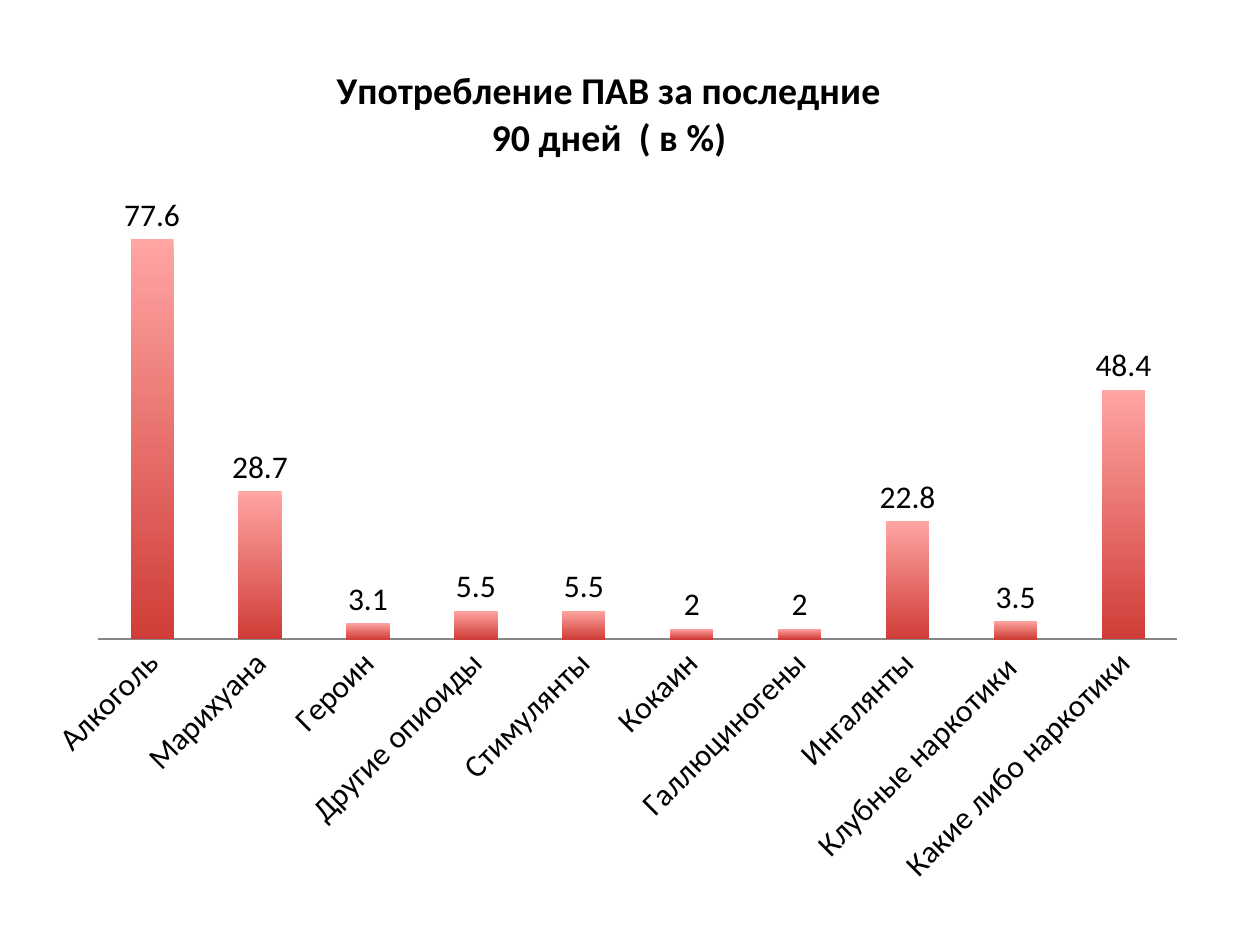
from pptx import Presentation
from pptx.chart.data import CategoryChartData
from pptx.dml.color import RGBColor
from pptx.enum.chart import XL_CHART_TYPE, XL_LABEL_POSITION, XL_TICK_MARK
from pptx.oxml import parse_xml
from pptx.oxml.ns import nsdecls, qn
from pptx.util import Cm, Pt

COLORS = {"text": "000000", "axis": "868686", "bar_top": "FFA5A2", "bar_bottom": "D03D38"}
USE = {
    "Алкоголь": 77.6,
    "Марихуана": 28.7,
    "Героин": 3.1,
    "Другие опиоиды": 5.5,
    "Стимулянты": 5.5,
    "Кокаин": 2,
    "Галлюциногены": 2,
    "Ингалянты": 22.8,
    "Клубные наркотики ": 3.5,
    "Какие либо наркотики": 48.4,
}
TITLE_LINES = ["Употребление ПАВ за последние", "90 дней  ( в %)"]


def rgb(name):
    return RGBColor.from_string(COLORS[name])


def format_font(font, size=18, bold=False, color="text"):
    font.name = "Calibri"
    font.size = Pt(size)
    font.bold = bold
    font.color.rgb = rgb(color)


def write_lines(text_frame, lines, **font_format):
    """Write one paragraph per line, all in the same format."""
    for index, line in enumerate(lines):
        paragraph = text_frame.add_paragraph() if index else text_frame.paragraphs[0]
        run = paragraph.add_run()
        run.text = line
        format_font(run.font, **font_format)


def manual_layout(inner=False, **fractions):
    """Return a c:layout placed by fractions (x, y, w, h) of the chart."""
    target = '<c:layoutTarget val="inner"/>' if inner else ""
    modes = '<c:xMode val="edge"/><c:yMode val="edge"/>'
    sizes = "".join(f'<c:{key} val="{value}"/>' for key, value in fractions.items())
    return parse_xml(
        f'<c:layout {nsdecls("c")}><c:manualLayout>{target}{modes}{sizes}'
        "</c:manualLayout></c:layout>"
    )


def place(element, layout, position):
    for old_layout in element.findall(qn("c:layout")):
        element.remove(old_layout)
    element.insert(position, layout)


class SlideBuilder:
    def __init__(self, slide):
        self.slide = slide

    def column_chart(self, values, left, top, width, height):
        data = CategoryChartData()
        data.categories = list(values)
        data.add_series("Series 1", list(values.values()))
        frame = self.slide.shapes.add_chart(
            XL_CHART_TYPE.COLUMN_CLUSTERED, Cm(left), Cm(top), Cm(width), Cm(height), data
        )
        chart = frame.chart
        chart.has_legend = False
        format_font(chart.font)
        self.format_columns(chart.plots[0])
        self.format_axes(chart)
        plot_area = chart._chartSpace.chart.plotArea
        place(plot_area, manual_layout(inner=True, x=0.06, y=0.17, w=0.92, h=0.53), 0)
        return chart

    def format_columns(self, plot):
        plot.gap_width = 150
        plot.overlap = -25
        plot.vary_by_categories = False
        fill = plot.series[0].format.fill
        fill.gradient()
        fill.gradient_angle = 270
        for stop, color, position in zip(fill.gradient_stops, ("bar_top", "bar_bottom"), (0, 1)):
            stop.color.rgb = rgb(color)
            stop.position = position
        plot.has_data_labels = True
        labels = plot.data_labels
        labels.show_value = True
        labels.position = XL_LABEL_POSITION.OUTSIDE_END
        format_font(labels.font)

    def format_axes(self, chart):
        value_axis = chart.value_axis
        value_axis.minimum_scale = 0
        value_axis.maximum_scale = 90
        value_axis.has_major_gridlines = False
        value_axis.visible = False
        category_axis = chart.category_axis
        category_axis.major_tick_mark = XL_TICK_MARK.NONE
        category_axis.format.line.color.rgb = rgb("axis")
        category_axis.format.line.width = Pt(0.75)
        format_font(category_axis.tick_labels.font)
        body = category_axis._element.find(qn("c:txPr")).find(qn("a:bodyPr"))
        body.set("rot", str(-45 * 60000))

    def chart_title(self, chart, lines, x, y):
        chart.has_title = True
        title = chart.chart_title
        write_lines(title.text_frame, lines, size=21.6, bold=True)
        place(title._element, manual_layout(x=x, y=y), 1)
        title._element.find(qn("c:overlay")).set("val", "1")


def main():
    presentation = Presentation()
    presentation.slide_width = Cm(25.4)
    presentation.slide_height = Cm(19.05)
    blank_layout = presentation.slide_layouts[6]
    builder = SlideBuilder(presentation.slides.add_slide(blank_layout))
    chart = builder.column_chart(USE, left=0.56, top=0.53, width=23.65, height=17.65)
    builder.chart_title(chart, TITLE_LINES, x=0.26, y=0.04)
    presentation.save("out.pptx")


if __name__ == "__main__":
    main()
